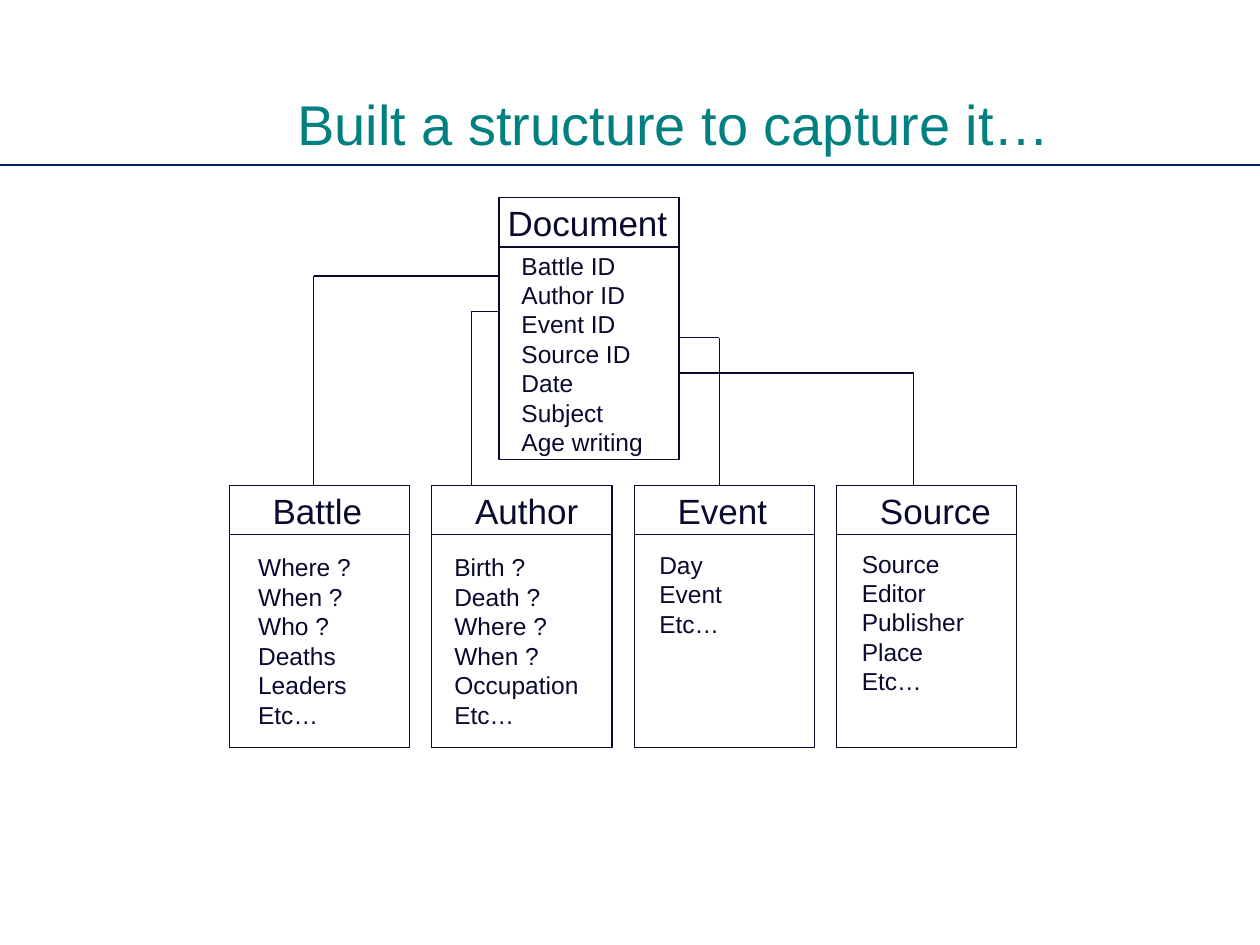
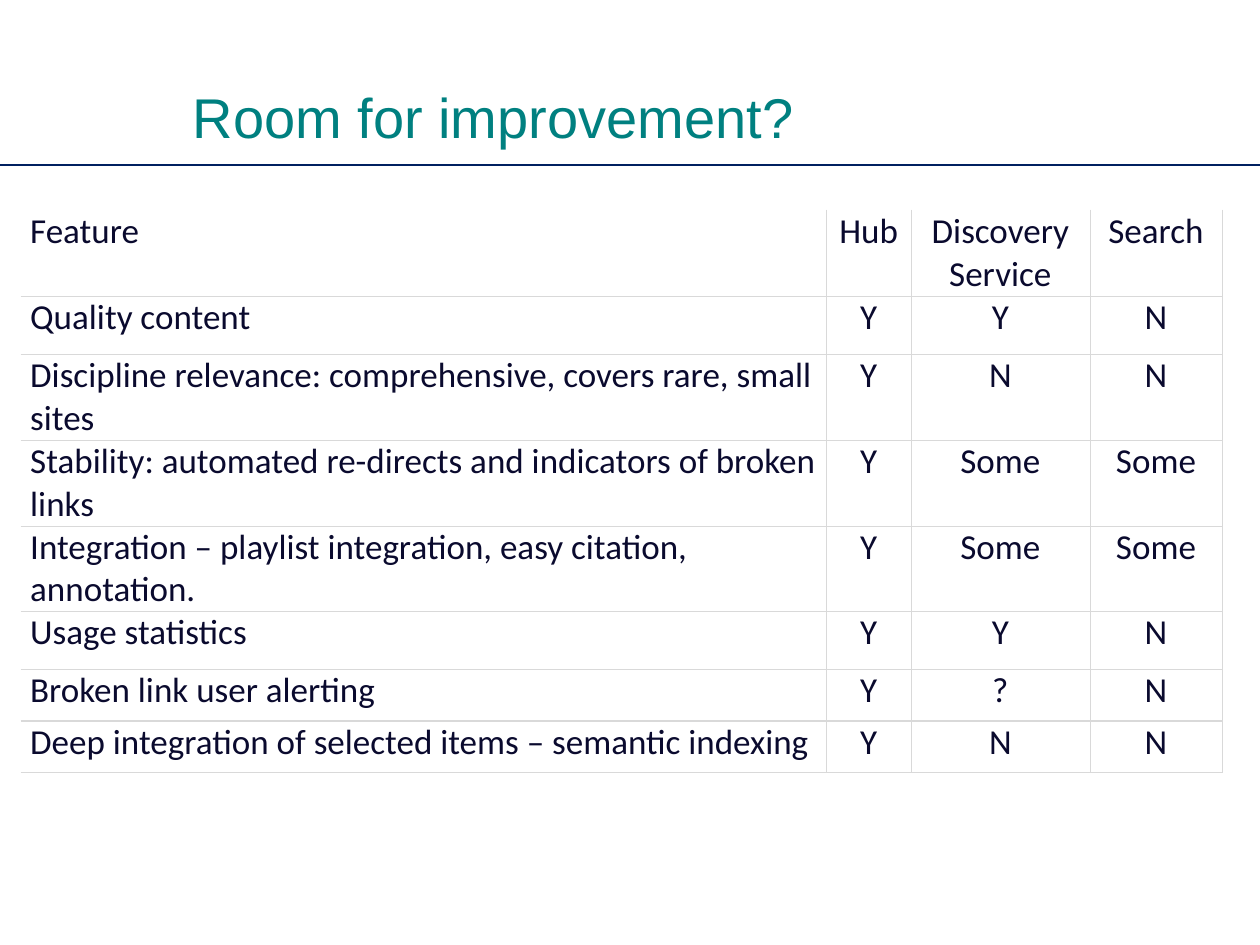
"""Builds two slides: a record structure diagram and a feature comparison table."""
from dataclasses import dataclass

from lxml.etree import SubElement
from pptx import Presentation
from pptx.dml.color import RGBColor as Rgb
from pptx.enum.shapes import MSO_CONNECTOR as Connector, MSO_SHAPE as Shape
from pptx.enum.text import MSO_ANCHOR as Anchor, MSO_AUTO_SIZE as AutoSize, PP_ALIGN as Align
from pptx.oxml import parse_xml
from pptx.oxml.ns import nsdecls, qn
from pptx.util import Inches, Pt

COLUMNS, ROWS = 100, 75
TITLE_ONLY = 5


@dataclass(frozen=True)
class Theme:
    ink: str = "0A0A2E"
    teal: str = "008080"
    navy: str = "002060"
    grid: str = "D9D9D9"
    paper: str = "FFFFFF"
    sans: str = "Arial"
    table_font: str = "Calibri"
    title_size: int = 32
    head_size: int = 20
    field_size: int = 14
    line: float = 0.75
    hairline: float = 0.25


def assign(target, values):
    for name, value in values.items():
        setattr(target, name, value)


class Deck:
    def __init__(self, theme):
        self.theme = theme
        self.show = Presentation()
        assign(self.show, {"slide_width": Inches(10), "slide_height": Inches(7.5)})
        self.page = None

    def x(self, columns):
        return round(self.show.slide_width * columns / COLUMNS)

    def y(self, rows):
        return round(self.show.slide_height * rows / ROWS)

    def frame(self, left, top, width, height):
        return self.x(left), self.y(top), self.x(width), self.y(height)

    def add_span(self, para, text, size, color, font, align=Align.LEFT):
        para.alignment = align
        span = para.add_run()
        span.text = text
        assign(span.font, {"name": font, "size": Pt(size), "bold": False, "italic": False})
        span.font.color.rgb = Rgb.from_string(color)

    def add_page(self, text, left, top, width, height):
        self.page = self.show.slides.add_slide(self.show.slide_layouts[TITLE_ONLY])
        title = self.page.shapes.title
        assign(title, dict(zip(("left", "top", "width", "height"),
                               self.frame(left, top, width, height))))
        assign(title.text_frame, {"word_wrap": True, "auto_size": AutoSize.NONE,
                                  "vertical_anchor": Anchor.MIDDLE})
        self.add_span(title.text_frame.paragraphs[0], text,
                      self.theme.title_size, self.theme.teal, self.theme.sans)
        self.line((0, 13.1), (COLUMNS, 13.1), self.theme.navy)

    def line(self, start, end, color=None):
        line = self.page.shapes.add_connector(
            Connector.STRAIGHT, self.x(start[0]), self.y(start[1]), self.x(end[0]), self.y(end[1]))
        line.line.width = Pt(self.theme.line)
        line.line.color.rgb = Rgb.from_string(color or self.theme.ink)
        SubElement(line.element.spPr, qn("a:effectLst"))

    def outline(self, left, top, width, height):
        box = self.page.shapes.add_shape(Shape.RECTANGLE, *self.frame(left, top, width, height))
        box.shadow.inherit = False
        box.fill.background()
        box.line.width = Pt(self.theme.line)
        box.line.color.rgb = Rgb.from_string(self.theme.ink)

    def text(self, lines, size, left, top, width, height):
        box = self.page.shapes.add_textbox(*self.frame(left, top, width, height))
        box.text_frame.word_wrap = True
        for index, line in enumerate(lines):
            para = box.text_frame.add_paragraph() if index else box.text_frame.paragraphs[0]
            self.add_span(para, line, size, self.theme.ink, self.theme.sans)

    def record(self, left, top, name, name_shift, fields, field_shift):
        self.outline(left, top, 14.3, 20.8)
        self.outline(left, top, 14.3, 3.9)
        self.text([name], self.theme.head_size, left + name_shift, top - 0.2, 15, 4.4)
        self.text(fields, self.theme.field_size, left + field_shift[0], top + field_shift[1],
                  12.9, 1 + 2.35 * len(fields))

    def link(self, side, level, bend, bottom):
        self.line((side, level), (bend, level))
        self.line((bend, level), (bend, bottom))

    def border(self, properties, edges):
        for index, (edge, width) in enumerate(edges.items()):
            properties.insert(index, parse_xml(
                f'<a:ln{edge} {nsdecls("a")} w="{Pt(width)}"><a:solidFill>'
                f'<a:srgbClr val="{self.theme.grid}"/></a:solidFill></a:ln{edge}>'))

    def table(self, rows, left, top, widths, heights, heavy_from):
        frame = self.page.shapes.add_table(
            len(rows), len(widths), *self.frame(left, top, sum(widths), sum(heights)))
        table = frame.table
        assign(table, {"first_row": False, "horz_banding": False})
        for column, width in zip(table.columns, widths):
            column.width = self.x(width)
        for row, height in zip(table.rows, heights):
            row.height = self.y(height)
        rule = [self.theme.line if row >= heavy_from else self.theme.hairline
                for row in range(len(rows))]
        cells = zip(table.iter_cells(), frame.element.iter(qn("a:tc")))
        for index, (cell, element) in enumerate(cells):
            row, column = divmod(index, len(widths))
            assign(cell, {"margin_left": self.x(0.7), "margin_right": self.x(0.7),
                          "margin_top": 0, "margin_bottom": 0})
            cell.fill.solid()
            cell.fill.fore_color.rgb = Rgb.from_string(self.theme.paper)
            self.add_span(cell.text_frame.paragraphs[0], rows[row][column],
                          self.theme.head_size, self.theme.ink, self.theme.table_font,
                          Align.CENTER if column else Align.LEFT)
            edges = {"L": self.theme.hairline} if column else {}
            edges["R"] = self.theme.hairline
            if row:
                edges["T"] = rule[row - 1]
            edges["B"] = rule[row]
            self.border(element.find(qn("a:tcPr")), edges)


def add_structure(deck):
    deck.add_page("Built a structure to capture it…", 22.6, 7, 75.5, 5.6)
    records = [
        ("Battle", ["Where ?", "When ?", "Who ?", "Deaths", "Leaders", "Etc…"], (1.3, 4.8)),
        ("Author", ["Birth ?", "Death ?", "Where ?", "When ?", "Occupation", "Etc…"], (0.8, 4.8)),
        ("Event", ["Day", "Event", "Etc…"], (1, 4.6)),
        ("Source", ["Source", "Editor", "Publisher", "Place", "Etc…"], (1, 4.5)),
    ]
    record_top = 38.55
    for index, (name, fields, shift) in enumerate(records):
        deck.record(18.2 + 16.07 * index, record_top, name, 2.45, fields, shift)
    document_left, document_right = 39.6, 53.9
    deck.record(document_left, 15.7, "Document", -0.3,
                ["Battle ID", "Author ID", "Event ID", "Source ID", "Date", "Subject",
                 "Age writing"], (0.8, 3.7))
    for side, level, bend in [(document_left, 21.9, 24.9), (document_left, 24.7, 37.4),
                              (document_right, 26.8, 57.1), (document_right, 29.6, 72.5)]:
        deck.link(side, level, bend, record_top)


def add_comparison(deck):
    deck.add_page("Room for improvement?", 14.3, 6.7, 81.1, 5)
    deck.table([
        ("Feature", "Hub", "Discovery Service", "Search"),
        ("Quality content", "Y", "Y", "N"),
        ("Discipline relevance: comprehensive, covers rare, small sites", "Y", "N", "N"),
        ("Stability: automated re-directs and indicators of broken links", "Y", "Some", "Some"),
        ("Integration – playlist integration, easy citation, annotation.", "Y", "Some", "Some"),
        ("Usage statistics", "Y", "Y", "N"),
        ("Broken link user alerting", "Y", "?", "N"),
        ("Deep integration of selected items – semantic indexing", "Y", "N", "N"),
    ], 1.7, 16.7, [63.9, 6.7, 14.2, 10.5], [6.8, 4.6, 6.8, 6.8, 6.8, 4.6, 4.1, 4.1], 5)


def main():
    deck = Deck(Theme())
    add_structure(deck)
    add_comparison(deck)
    deck.show.save("out.pptx")


if __name__ == "__main__":
    main()
